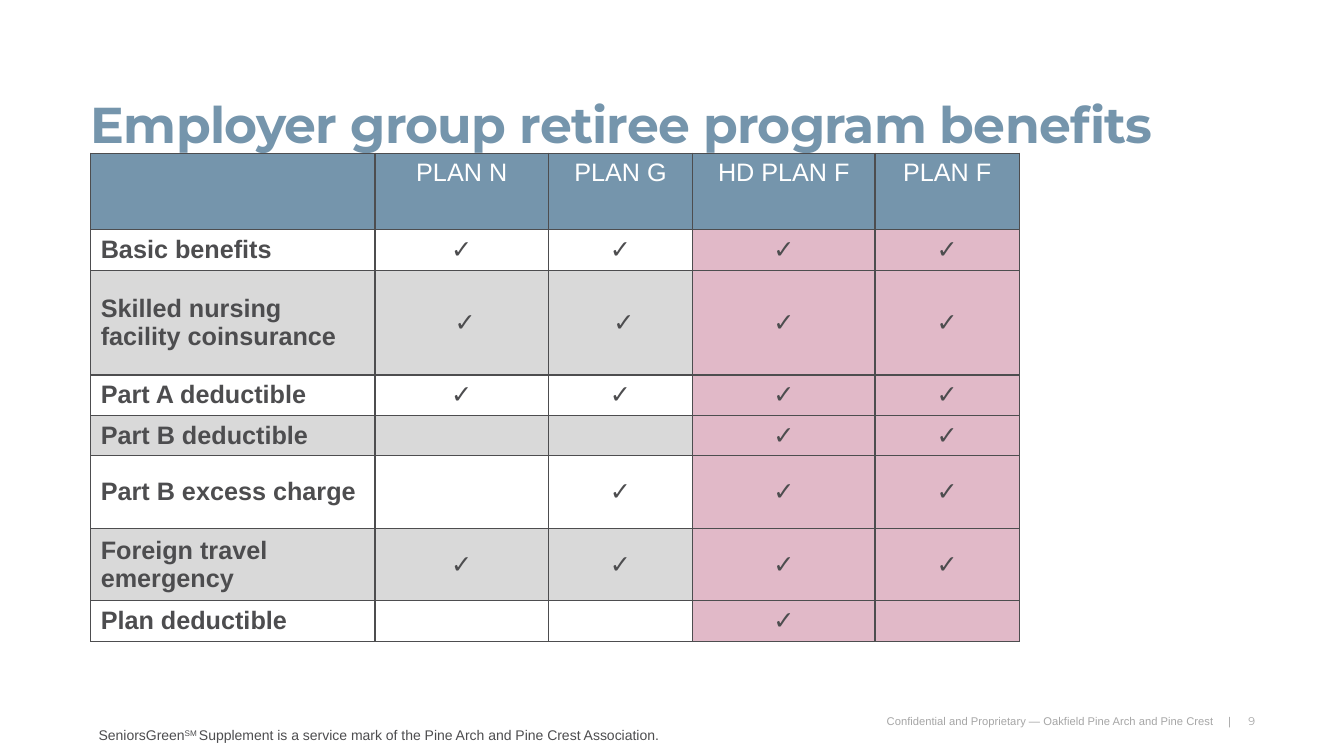
"""Build the slide that compares retiree program benefits by plan."""
import pptx
import pptx.util
import pptx.dml.color
import pptx.enum.text
import pptx.oxml
import pptx.oxml.ns

Inches = pptx.util.Inches
Pt = pptx.util.Pt
RGB = pptx.dml.color.RGBColor
Align = pptx.enum.text.PP_ALIGN
Anchor = pptx.enum.text.MSO_ANCHOR

BLUE = RGB(0x75, 0x95, 0xAC)
INK = RGB(0x4D, 0x4D, 0x4F)
PINK = RGB(0xE1, 0xB9, 0xC8)
GRAY = RGB(0xD9, 0xD9, 0xD9)
PALE = RGB(0xA6, 0xA6, 0xA6)
WHITE = RGB(0xFF, 0xFF, 0xFF)


def add_run(para, text, color, **form):
    run = para.add_run()
    run.text = text
    run.font.color.rgb = color
    for name, value in form.items():
        setattr(run.font, name, value)
    return run


def add_box(left, top, width, height, inset=0):
    frame = slide.shapes.add_textbox(
        Inches(left), Inches(top), Inches(width), Inches(height)).text_frame
    frame.word_wrap = True
    if inset == 0:
        for side in ("left", "top", "right", "bottom"):
            setattr(frame, "margin_" + side, 0)
    return frame.paragraphs[0]


deck = pptx.Presentation()
deck.slide_width = Inches(13.33)
deck.slide_height = Inches(7.5)
slide = deck.slides.add_slide(deck.slide_layouts[6])

footer = [
    (7.94, 4.1, "Confidential and Proprietary — Oakfield Pine Arch and Pine Crest", "Arial"),
    (12.06, 0.15, "|", "Arial"),
    (12.2, 0.25, "9", "Montserrat"),
]
for left, width, text, face in footer:
    para = add_box(left, 7.09, width, 0.4)
    para.alignment = Align.RIGHT
    add_run(para, text, PALE, size=Pt(8), name=face)

title = add_box(0.9, 1, 11.56, 1.04)
title.line_spacing = Pt(38)
head = add_run(title, "Employer group retiree program benefits", BLUE,
               size=Pt(36), name="Montserrat", bold=True)
head.font._element.set("spc", "-50")

plans = ["", "PLAN N", "PLAN G", "HD PLAN F", "PLAN F"]
rows = [
    ("Basic benefits", "✓", "✓", "✓", "✓"),
    ("Skilled nursing facility coinsurance", " ✓", " ✓", "✓", "✓"),
    ("Part A deductible", "✓", "✓", "✓", "✓"),
    ("Part B deductible", "", "", "✓", "✓"),
    ("Part B excess charge", "", "✓", "✓", "✓"),
    ("Foreign travel emergency", "✓", "✓", "✓", "✓"),
    ("Plan deductible", "", "", "✓", ""),
]
shaded = {2, 4, 6}
widths = [2.82, 1.72, 1.43, 1.81, 1.43]
heights = [0.76, 0.4, 1.04, 0.4, 0.4, 0.72, 0.72, 0.4]
table = slide.shapes.add_table(
    len(heights), len(widths), Inches(0.9), Inches(1.52),
    Inches(sum(widths)), Inches(sum(heights))).table
for col, width in zip(table.columns, widths):
    col.width = Inches(width)
for row, height in zip(table.rows, heights):
    row.height = Inches(height)

space = pptx.oxml.ns.nsdecls("a")
for r, texts in enumerate([plans] + rows):
    for c, text in enumerate(texts):
        cell = table.cell(r, c)
        if r == 0:
            fill = BLUE
        elif c > 2:
            fill = PINK
        else:
            fill = GRAY if r in shaded else WHITE
        cell.fill.solid()
        cell.fill.fore_color.rgb = fill
        cell.vertical_anchor = Anchor.MIDDLE if r else Anchor.TOP
        para = cell.text_frame.paragraphs[0]
        para.alignment = Align.CENTER if c else Align.LEFT
        para.font.size = Pt(18)
        if text:
            add_run(para, text, INK if r else WHITE,
                    size=Pt(18), name="Arial", bold=c == 0)
        props = cell._tc.get_or_add_tcPr()
        for n, side in enumerate(("lnL", "lnR", "lnT", "lnB")):
            props.insert(n, pptx.oxml.parse_xml(
                f'<a:{side} {space} w="12700"><a:solidFill>'
                f'<a:srgbClr val="{INK}"/></a:solidFill></a:{side}>'))

note = add_box(0.88, 7.16, 6.66, 0.27, inset=0.1)
parts = [
    ("SeniorsGreen", 0),
    ("SM\u00a0".replace("\u00a0", " "), 30000),
    ("Supplement is a service mark of the Pine Arch and Pine Crest Association.", 0),
]
for text, lift in parts:
    run = add_run(note, text, INK, size=Pt(10), name="Arial")
    run.font._element.set("baseline", str(lift))

deck.save("out.pptx")
